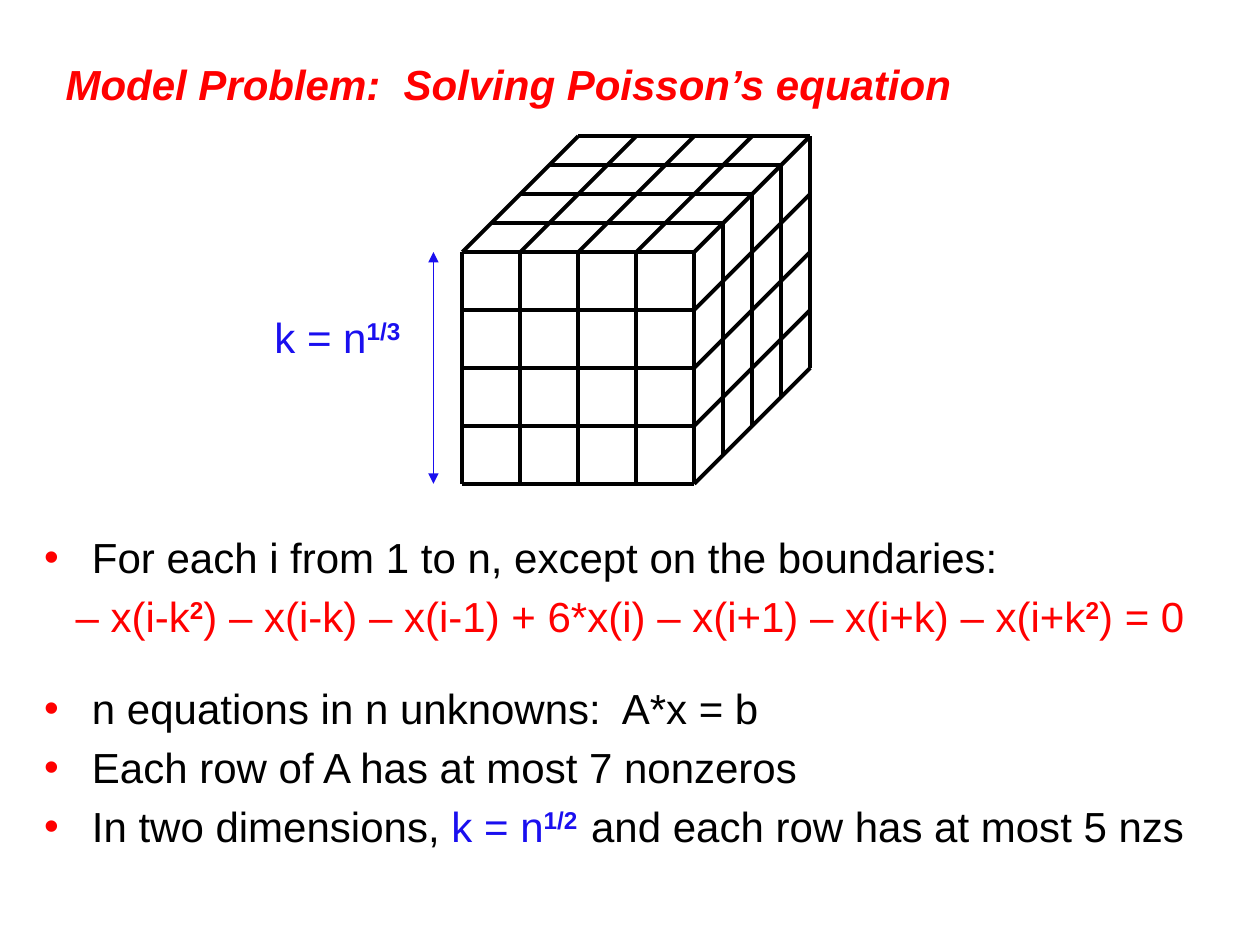
"""Build the slide on the model problem of Poisson's equation."""
from lxml.etree import SubElement
from pptx import Presentation
from pptx.dml.color import RGBColor
from pptx.enum.shapes import MSO_CONNECTOR as CONNECTOR
from pptx.enum.text import MSO_ANCHOR as ANCHOR, MSO_AUTO_SIZE as AUTO_SIZE, PP_ALIGN as ALIGN
from pptx.oxml.ns import qn
from pptx.util import Inches, Pt

BLACK = RGBColor(0x00, 0x00, 0x00)
RED = RGBColor(0xFF, 0x00, 0x00)
BLUE = RGBColor(0x1A, 0x0F, 0xEF)

CELLS = 4
SIDE = 1.84
DEPTH = 0.92
CUBE_LEFT, CUBE_TOP = 3.67, 2.0


def place(shape, left, top, width, height):
    shape.left, shape.top = Inches(left), Inches(top)
    shape.width, shape.height = Inches(width), Inches(height)


def style_paragraph(paragraph, align=ALIGN.LEFT):
    paragraph.alignment = align
    paragraph.font.name = "Arial"
    paragraph.font.size = Pt(24)


def add_runs(paragraph, *parts):
    for text, color, raised in parts:
        run = paragraph.add_run()
        run.text = text
        run.font.color.rgb = color
        if raised:
            run.font.bold = True
            run._r.get_or_add_rPr().set("baseline", "30000")


def set_bullet(paragraph, bulleted):
    properties = paragraph._p.get_or_add_pPr()
    properties.set("marL", str(Inches(0.38)))
    properties.set("indent", str(Inches(-0.38)))
    default_font = properties.find(qn("a:defRPr"))
    if bulleted:
        bullet_color = properties.makeelement(qn("a:buClr"))
        SubElement(bullet_color, qn("a:srgbClr")).set("val", str(RED))
        default_font.addprevious(bullet_color)
        default_font.addprevious(properties.makeelement(qn("a:buChar"), {"char": "•"}))
    else:
        default_font.addprevious(properties.makeelement(qn("a:buNone")))


def add_line(slide, start, end, color, width, arrows=False):
    line = slide.shapes.add_connector(CONNECTOR.STRAIGHT, *map(Inches, start + end))
    line.line.color.rgb = color
    line.line.width = Pt(width)
    if arrows:
        outline = line.line._get_or_add_ln()
        for arrow_end in ("a:headEnd", "a:tailEnd"):
            SubElement(outline, qn(arrow_end)).set("type", "triangle")
    SubElement(line._element.spPr, qn("a:effectLst"))


def face_edges(corner, across, along):
    (x, y), (ax, ay), (bx, by) = corner, across, along
    for step in range(CELLS + 1):
        part = step / CELLS
        for (sx, sy), (lx, ly) in (((ax, ay), (bx, by)), ((bx, by), (ax, ay))):
            start = (round(x + part * sx, 2), round(y + part * sy, 2))
            yield start, (round(start[0] + lx, 2), round(start[1] + ly, 2))


def add_cube(slide):
    right, down, back = (SIDE, 0), (0, SIDE), (DEPTH, -DEPTH)
    near_left, near_right = (CUBE_LEFT, CUBE_TOP), (CUBE_LEFT + SIDE, CUBE_TOP)
    faces = ((near_left, right, down), (near_left, right, back), (near_right, back, down))
    edges = dict.fromkeys(edge for face in faces for edge in face_edges(*face))
    for start, end in edges:
        add_line(slide, start, end, BLACK, 2.25)


def add_side_label(slide):
    label = slide.shapes.add_textbox(Inches(2.08), Inches(2.42), Inches(1.24), Inches(0.5))
    label.text_frame.word_wrap = False
    label.text_frame.auto_size = AUTO_SIZE.SHAPE_TO_FIT_TEXT
    formula = label.text_frame.paragraphs[0]
    style_paragraph(formula)
    add_runs(formula, ("k = n", BLUE, False), ("1/3", BLUE, True))
    add_line(slide, (3.44, CUBE_TOP + SIDE), (3.44, CUBE_TOP), BLUE, 1, arrows=True)


def fill_title(title):
    place(title, 0.42, 0.33, 9.33, 0.67)
    title.text_frame.text = "Model Problem:  Solving Poisson’s equation"
    title.text_frame.vertical_anchor = ANCHOR.MIDDLE
    title.text_frame.auto_size = AUTO_SIZE.NONE
    heading = title.text_frame.paragraphs[0]
    style_paragraph(heading)
    heading.font.bold = heading.font.italic = True
    heading.font.color.rgb = RED


def fill_body(body):
    place(body, 0.25, 4.17, 9.5, 3)
    frame = body.text_frame
    frame.auto_size = AUTO_SIZE.NONE
    equation = (
        ("– x(i-k", RED, False), ("2", RED, True),
        (") – x(i-k) – x(i-1) + 6*x(i) – x(i+1) – x(i+k) – x(i+k", RED, False),
        ("2", RED, True), (") = 0", RED, False),
    )
    system = (("n equations in n unknowns:  A*x = b", BLACK, False),)
    statements = (
        (("For each i from 1 to n, except on the boundaries:", BLACK, False),),
        equation,
        system,
        (("Each row of A has at most 7 nonzeros", BLACK, False),),
        (("In two dimensions, ", BLACK, False), ("k = n", BLUE, False),
         ("1/2  ", BLUE, True), ("and each row has at most 5 nzs", BLACK, False)),
    )
    for index, statement in enumerate(statements):
        paragraph = frame.add_paragraph() if index else frame.paragraphs[0]
        style_paragraph(paragraph, ALIGN.CENTER if statement is equation else ALIGN.LEFT)
        if statement is system:
            paragraph.space_before = Pt(24)
        set_bullet(paragraph, bulleted=statement is not equation)
        add_runs(paragraph, *statement)


def main():
    deck = Presentation()
    deck.slide_width, deck.slide_height = Inches(10), Inches(7.5)
    slide = deck.slides.add_slide(deck.slide_layouts[1])
    fill_title(slide.shapes.title)
    add_cube(slide)
    add_side_label(slide)
    fill_body(slide.placeholders[1])
    deck.save("out.pptx")


if __name__ == "__main__":
    main()
